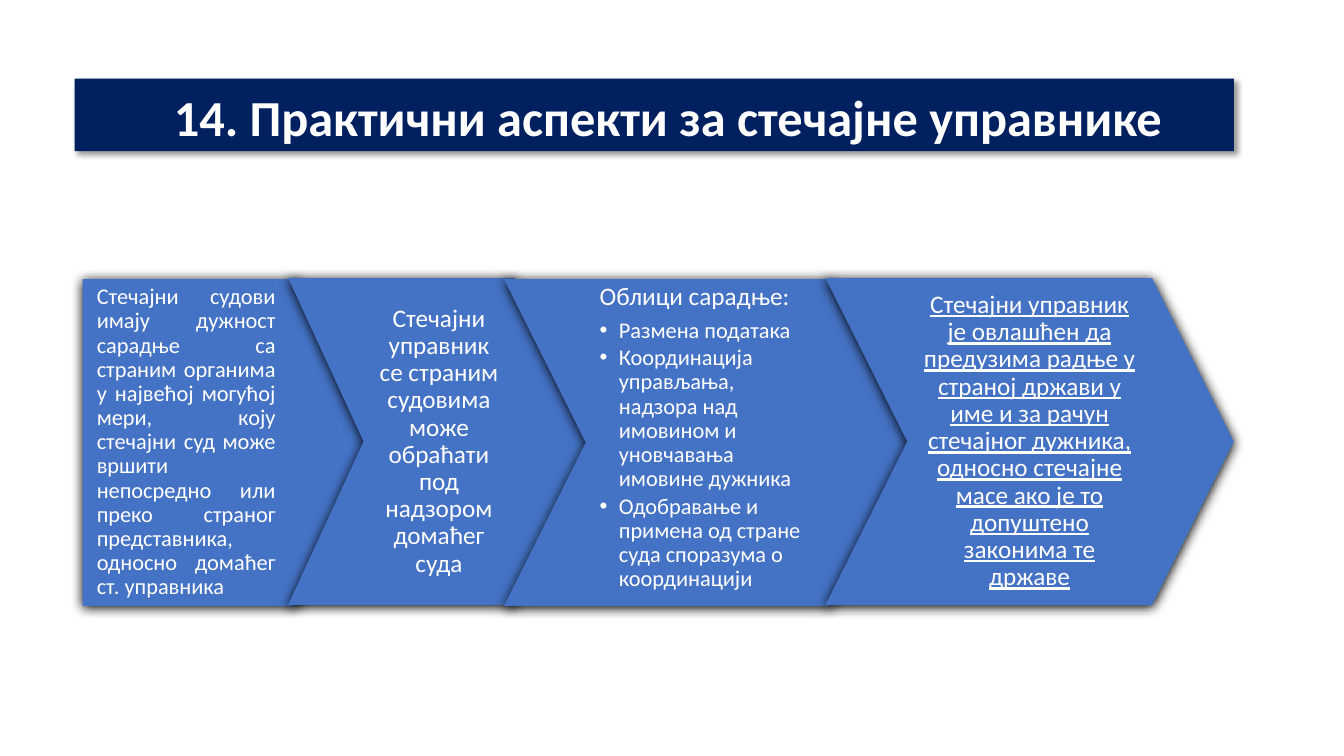
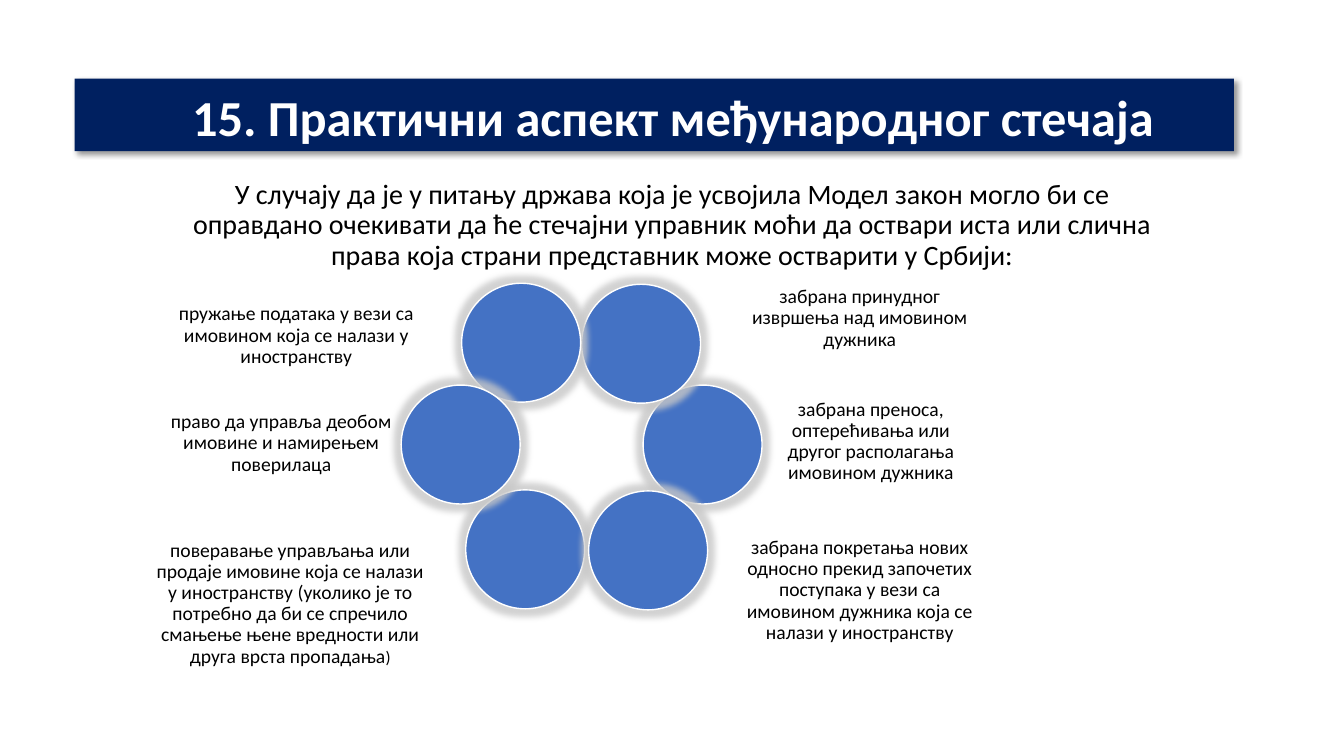
from lxml import etree
from pptx import Presentation
from pptx.dml.color import RGBColor
from pptx.enum.shapes import MSO_SHAPE
from pptx.enum.text import MSO_ANCHOR, PP_ALIGN
from pptx.oxml.ns import qn
from pptx.util import Inches, Pt

COLUMNS, ROWS = 40, 22.5
WIDTH, HEIGHT = Inches(13.333), Inches(7.5)
RECTANGLE, CIRCLE = MSO_SHAPE.RECTANGLE, MSO_SHAPE.OVAL
PENTAGON, CHEVRON = MSO_SHAPE.PENTAGON, MSO_SHAPE.CHEVRON
TOP, MIDDLE, BOTTOM = MSO_ANCHOR.TOP, MSO_ANCHOR.MIDDLE, MSO_ANCHOR.BOTTOM
LEFT, CENTER, JUSTIFY = PP_ALIGN.LEFT, PP_ALIGN.CENTER, PP_ALIGN.JUSTIFY

FONT, BULLET_FONT = "Calibri", "Arial"
NAVY, BLUE, WHITE, BLACK, SILVER = "002060", "4472C4", "FFFFFF", "000000", "C8C8C8"
BAND_SHADOW = (40, 4, 3, 45)
ARROW_SHADOW = (100, 8.5, 1, 90)

LOW_TOP, HIGH_TOP, ARROW_HEIGHT, TIP_SHARE = 8.31, 8.28, 9.72, 0.25
DIAMETER = 3.54

DUTY = (
    "Стечајни судови имају дужност сарадње са страним органима у највећој "
    "могућој мери, коју стечајни суд може вршити непосредно или преко страног "
    "представника, односно домаћег ст. управника"
)
CONTACT = "Стечајни управник се страним судовима може обраћати под надзором домаћег суда"
FORMS_HEADING = "Облици сарадње:"
FORMS = [
    "Размена података",
    "Координација управљања, надзора над имовином и уновчавања имовине дужника",
    "Одобравање и примена од стране суда споразума о координацији",
]
AUTHORITY = (
    "Стечајни управник је овлашћен да предузима радње у страној држави у име и "
    "за рачун стечајног дужника, односно стечајне масе ако је то допуштено "
    "законима те државе"
)
INTRO = (
    "У случају да је у питању држава која је усвојила Модел закон могло би се "
    "оправдано очекивати да ће стечајни управник моћи да оствари иста или слична "
    "права која страни представник може остварити у Србији:"
)
RIGHTS = [
    ((20.91, 13.23), (22.71, 11.4, 6.42, 3.48),
     [("забрана преноса, оптерећивања или другог располагања имовином дужника", 14)]),
    ((19.08, 10.23), (22.05, 7.68, 7.08, 3.6),
     [("забрана принудног извршења над имовином дужника", 14)]),
    ((15.63, 16.35), (4.56, 15.93, 8.16, 4.08),
     [("поверавање управљања или продаје имовине која се налази у иностранству "
       "(уколико је то потребно да би се спречило смањење њене вредности или "
       "друга врста пропадања", 14), (")", 12)]),
    ((15.51, 10.2), (5.01, 8.76, 7.62, 2.46),
     [("пружање података у вези са имовином која се налази у иностранству", 14)]),
    ((13.71, 13.23), (4.56, 11.4, 7.62, 3.6),
     [("право да управља деобом имовине и намирењем поверилаца", 14)]),
    ((19.29, 16.38), (22.05, 15.93, 7.08, 3.3),
     [("забрана покретања нових односно прекид започетих поступака у вези са "
       "имовином дужника која се налази у иностранству", 14)]),
]


def color(value):
    return RGBColor.from_string(value)


def place(left, top, width, height):
    return (round(left * WIDTH / COLUMNS), round(top * HEIGHT / ROWS),
            round(width * WIDTH / COLUMNS), round(height * HEIGHT / ROWS))


def add_effect(shape, kind, tone, opacity, **settings):
    effects = shape._element.spPr.find(qn("a:effectLst"))
    effect = etree.SubElement(effects, qn(kind), **settings)
    tint = etree.SubElement(effect, qn("a:srgbClr"), val=tone)
    etree.SubElement(tint, qn("a:alpha"), val=str(opacity * 1000))


def add_shadow(shape, opacity, blur, distance, angle):
    add_effect(shape, "a:outerShdw", BLACK, opacity, blurRad=str(Pt(blur)),
               dist=str(Pt(distance)), dir=str(angle * 60000),
               algn="ctr", rotWithShape="0")


def add_filled(slide, kind, area, fill):
    shape = slide.shapes.add_shape(kind, *place(*area))
    shape.shadow.inherit = False
    shape.fill.solid()
    shape.fill.fore_color.rgb = color(fill)
    shape.line.fill.background()
    return shape


def set_frame(frame, anchor, insets):
    frame.word_wrap = True
    frame.vertical_anchor = anchor
    (frame.margin_left, frame.margin_top,
     frame.margin_right, frame.margin_bottom) = map(Inches, insets)


def format_paragraph(paragraph, align, spacing=0.9, after=6, indent=0, bullet=False):
    properties = paragraph._p.get_or_add_pPr()
    if indent:
        properties.set("marL", str(Inches(indent)))
    if bullet:
        properties.set("indent", str(-Inches(indent)))
        etree.SubElement(properties, qn("a:buFont"), typeface=BULLET_FONT)
        etree.SubElement(properties, qn("a:buChar"), char="•")
    paragraph.alignment = align
    paragraph.line_spacing = spacing
    paragraph.space_after = Pt(after)


def add_run(paragraph, text, size, tone, bold=False, underline=False):
    run = paragraph.add_run()
    run.text = text
    run.font.name = FONT
    run.font.size = Pt(size)
    run.font.bold = bold
    run.font.underline = underline
    run.font.color.rgb = color(tone)


def write(frame, runs, tone, align=CENTER, anchor=MIDDLE,
          insets=(0, 0, 0, 0), underline=False):
    set_frame(frame, anchor, insets)
    paragraph = frame.paragraphs[0]
    format_paragraph(paragraph, align)
    for text, size in runs:
        add_run(paragraph, text, size, tone, underline=underline)


def add_title(slide, text, indent):
    band = add_filled(slide, RECTANGLE, (2.22, 2.34, 34.5, 2.16), NAVY)
    add_shadow(band, *BAND_SHADOW)
    set_frame(band.text_frame, BOTTOM, (0.1, 0.05, 0.1, 0.05))
    paragraph = band.text_frame.paragraphs[0]
    format_paragraph(paragraph, CENTER, 1.07, 8, indent)
    add_run(paragraph, text, 36, WHITE, bold=True)


def add_arrow(slide, kind, left, top, width):
    arrow = add_filled(slide, kind, (left, top, width, ARROW_HEIGHT), BLUE)
    add_shadow(arrow, *ARROW_SHADOW)
    arrow.adjustments[0] = TIP_SHARE
    tip = TIP_SHARE * min(width, ARROW_HEIGHT)
    if kind == PENTAGON:
        area = (left, top, width - tip / 2, ARROW_HEIGHT)
    else:
        area = (left + tip, top, width - 2 * tip, ARROW_HEIGHT)
    return slide.shapes.add_textbox(*place(*area)).text_frame


def add_circle(slide, center_x, center_y):
    area = (center_x - DIAMETER / 2, center_y - DIAMETER / 2, DIAMETER, DIAMETER)
    circle = add_filled(slide, CIRCLE, area, BLUE)
    circle.line.color.rgb = color(WHITE)
    circle.line.width = Pt(1)
    add_effect(circle, "a:glow", SILVER, 80, rad=str(Pt(9)))


def add_label(slide, area, runs):
    left, top, width, height = place(*area)
    right, bottom = left + width, top + height
    outline = slide.shapes.build_freeform(left, top)
    outline.add_line_segments([(right, top), (right, bottom), (left, bottom)])
    label = outline.convert_to_shape()
    label.shadow.inherit = False
    label.fill.background()
    label.line.fill.background()
    write(label.text_frame, runs, BLACK)


def build_practice(slide):
    add_title(slide, "14. Практични аспекти за стечајне управнике", 0.28)
    insets = (0.14, 0.04, 0.14, 0.04)
    duty = add_arrow(slide, PENTAGON, 2.46, LOW_TOP, 8.52)
    write(duty, [(DUTY, 16)], WHITE, JUSTIFY, insets=(0.14, 0.04, 0.57, 0.04))
    contact = add_arrow(slide, CHEVRON, 8.58, HIGH_TOP, 8.97)
    write(contact, [(CONTACT, 18)], WHITE, insets=insets)
    forms = add_arrow(slide, CHEVRON, 15, LOW_TOP, 12.15)
    write(forms, [(FORMS_HEADING, 18)], WHITE, LEFT, TOP, insets)
    for form in FORMS:
        paragraph = forms.add_paragraph()
        format_paragraph(paragraph, LEFT, after=2.4, indent=0.19, bullet=True)
        add_run(paragraph, form, 16, WHITE)
    authority = add_arrow(slide, CHEVRON, 24.57, HIGH_TOP, 12.15)
    write(authority, [(AUTHORITY, 18)], WHITE, insets=insets, underline=True)


def build_rights(slide):
    add_title(slide, "15. Практични аспект међународног стечаја", 0.38)
    add_label(slide, (4.98, 5.07, 30.06, 3.3), [(INTRO, 20)])
    for center, label_area, label in RIGHTS:
        add_circle(slide, *center)
        add_label(slide, label_area, label)


def main():
    deck = Presentation()
    deck.slide_width, deck.slide_height = WIDTH, HEIGHT
    for build in (build_practice, build_rights):
        build(deck.slides.add_slide(deck.slide_layouts[6]))
    deck.save("out.pptx")


if __name__ == "__main__":
    main()
